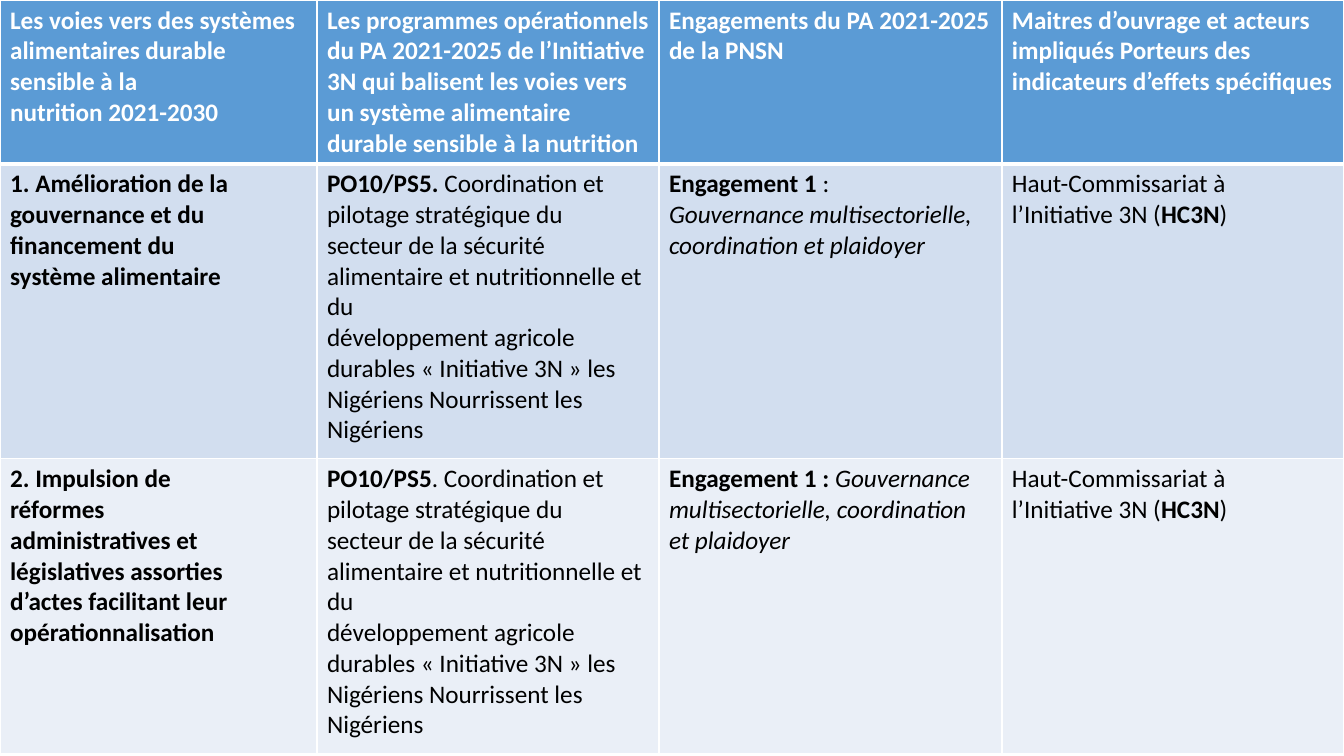
from lxml.etree import SubElement
from pptx import Presentation
from pptx.dml.color import RGBColor
from pptx.oxml.ns import qn
from pptx.util import Emu, Pt

PX_PER_INCH = 100.8
FONT = "Calibri"
WHITE, BLACK = "FFFFFF", "000000"
HEADER_FILL, BAND_FILLS = "5B9BD5", ("D2DEEF", "EAEFF7")
COL_WIDTHS = (317, 342, 343, 342)
ROW_HEIGHTS = (163, 295, 295)

# Each cell is a list of paragraphs, each paragraph a list of (text, style) runs
# with style "b" for bold, "i" for italic and "" for plain.
HEADERS = [
    [[("Les voies vers des systèmes alimentaires durable sensible à la", "b")],
     [("nutrition 2021-2030", "b")]],
    [[("Les programmes opérationnels du PA 2021-2025 de l’Initiative 3N qui balisent "
       "les voies vers un système alimentaire durable sensible à la nutrition", "b")]],
    [[("Engagements du PA 2021-2025 de la PNSN", "b")]],
    [[("Maitres d’ouvrage et acteurs impliqués Porteurs des indicateurs "
       "d’effets spécifiques", "b")]],
]
PATHWAYS = [
    ["1. Amélioration de la", "gouvernance et du", "financement du",
     "système alimentaire"],
    ["2. Impulsion de", "réformes", "administratives et", "législatives assorties",
     "d’actes facilitant leur", "opérationnalisation"],
]
PROGRAMME_CODES = [
    [("PO10/PS5. ", "b"), ("Coordination et pilotage stratégique du", "")],
    [("PO10/PS5", "b"), (". Coordination et pilotage stratégique du", "")],
]
PROGRAMME_TAIL = [
    [("secteur de la sécurité alimentaire et nutritionnelle et du", "")],
    [("développement agricole durables « Initiative 3N » les", "")],
    [("Nigériens Nourrissent les Nigériens", "")],
]
GOVERNANCE = ("Gouvernance multisectorielle, coordination et plaidoyer", "i")
COMMITMENTS = [
    [[("Engagement 1 ", "b"), (":", "")], [GOVERNANCE]],
    [[("Engagement 1 : ", "b"), GOVERNANCE]],
]
OWNER = [
    [("Haut-Commissariat à", "")],
    [("l’Initiative 3N (", ""), ("HC3N", "b"), (")", "")],
]


def px(n):
    return Emu(round(n * 914400 / PX_PER_INCH))


def rgb(color):
    return RGBColor.from_string(color)


def add_run(p, text, size=18, color=BLACK, bold=False, italic=False):
    r = p.add_run()
    r.text = text
    r.font.name, r.font.size = FONT, Pt(size)
    r.font.bold, r.font.italic = bold, italic
    r.font.color.rgb = rgb(color)


def set_borders(cell, bottom=1, top=1):
    """Draw white borders; widths are in points."""
    tc_pr = cell._tc.get_or_add_tcPr()
    widths = {"lnL": 1, "lnR": 1, "lnT": top, "lnB": bottom}
    for i, (side, width) in enumerate(widths.items()):
        ln = SubElement(tc_pr, qn("a:" + side), w=str(Pt(width)))
        fill = SubElement(ln, qn("a:solidFill"))
        SubElement(fill, qn("a:srgbClr"), val=WHITE)
        tc_pr.remove(ln)
        tc_pr.insert(i, ln)  # borders precede the cell fill


def fill_cell(cell, paragraphs, fill, color):
    cell.fill.solid()
    cell.fill.fore_color.rgb = rgb(fill)
    tf = cell.text_frame
    for i, runs in enumerate(paragraphs):
        p = tf.add_paragraph() if i else tf.paragraphs[0]
        for text, style in runs:
            add_run(p, text, color=color, bold=style == "b", italic=style == "i")


def body_rows():
    for pathway, code, commitment in zip(PATHWAYS, PROGRAMME_CODES, COMMITMENTS):
        yield [[[(line, "b")] for line in pathway],
               [code] + PROGRAMME_TAIL, commitment, OWNER]


def add_pathway_table(slide, left, top, col_widths, row_heights):
    frame = slide.shapes.add_table(
        len(row_heights), len(col_widths), px(left), px(top),
        px(sum(col_widths)), px(sum(row_heights)))
    table = frame.table
    for column, width in zip(table.columns, col_widths):
        column.width = px(width)
    for row, height in zip(table.rows, row_heights):
        row.height = px(height)

    # Header row, then banded body rows
    for i, contents in enumerate([HEADERS, *body_rows()]):
        fill = BAND_FILLS[i - 1] if i else HEADER_FILL
        for j, paragraphs in enumerate(contents):
            cell = table.cell(i, j)
            fill_cell(cell, paragraphs, fill, BLACK if i else WHITE)
            set_borders(cell, bottom=1 if i else 3, top=3 if i == 1 else 1)


def main():
    prs = Presentation()
    prs.slide_width, prs.slide_height = px(1344), px(756)
    slide = prs.slides.add_slide(prs.slide_layouts[6])
    add_pathway_table(slide, 0, 0, COL_WIDTHS, ROW_HEIGHTS)
    prs.save("out.pptx")


if __name__ == "__main__":
    main()
